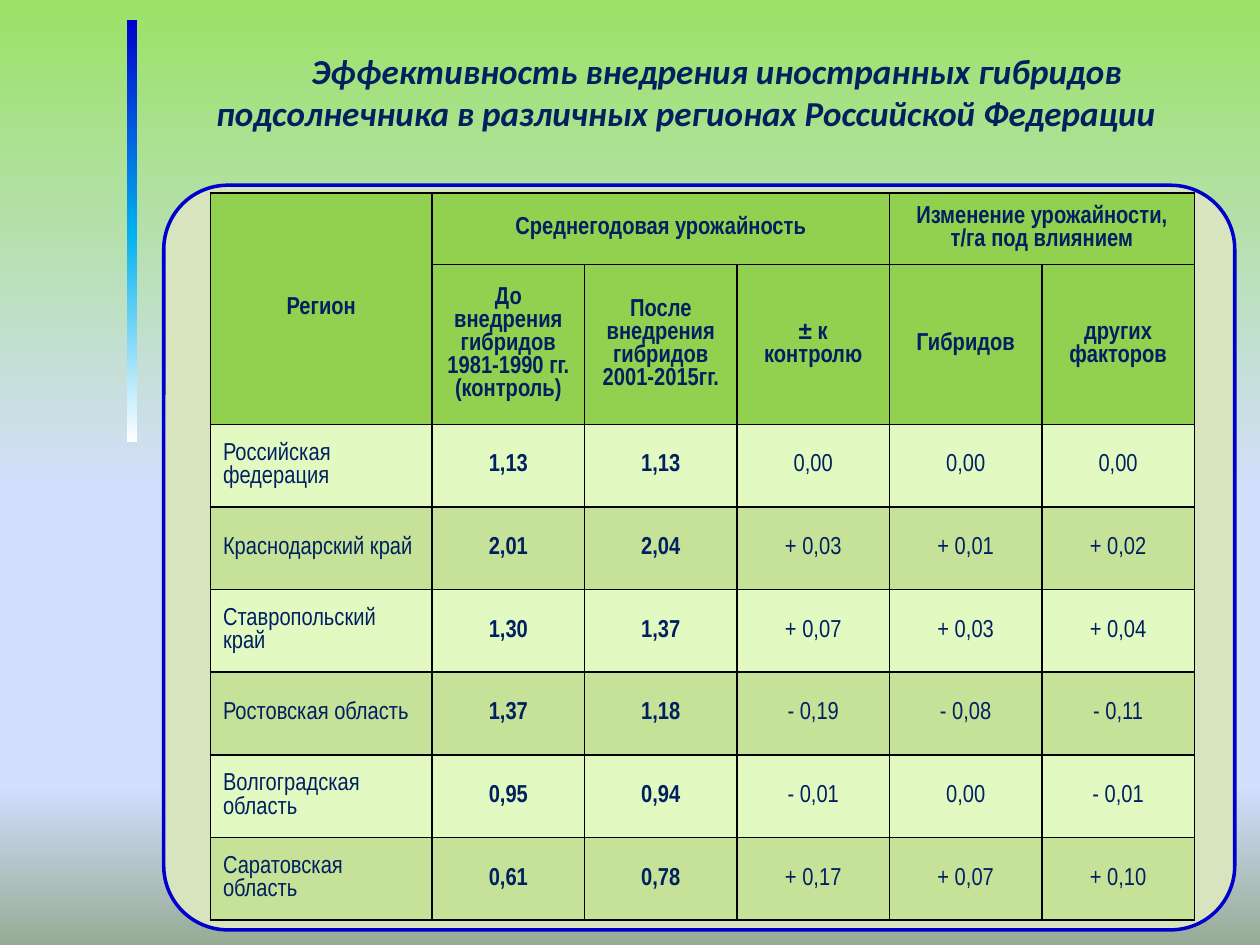
from dataclasses import dataclass

from lxml import etree
from pptx import Presentation
from pptx import util as u
from pptx.dml.color import RGBColor
from pptx.enum import shapes, text
from pptx.oxml.ns import qn

COLORS = {
    "text": "002060", "line": "0000CC", "panel": "D7E4BD", "border": "000000",
    "header": "92D050", "light": "E2FAC2", "dark": "C6E198",
}
BACKGROUND = [(0, "9BE266"), (53, "D4DEFF"), (83, "D4DEFF"), (100, "96AB94")]
BAR = [(0, "0000CC"), (50, "00B0F0"), (100, "FFFFFF")]
TITLE = ("Эффективность внедрения иностранных гибридов подсолнечника "
         "в различных регионах Российской Федерации")
COL_WIDTHS = [1.76] + [1.21] * 5
ROW_HEIGHTS = [0.57, 1.26] + [0.656] * 6


@dataclass
class Header:
    row: int
    col: int
    label: str
    rows: int = 1
    cols: int = 1


HEADERS = [
    Header(0, 0, "Регион", rows=2),
    Header(0, 1, "Среднегодовая урожайность", cols=3),
    Header(0, 4, "Изменение урожайности, т/га под влиянием", cols=2),
    Header(1, 1, "До внедрения гибридов 1981-1990 гг. (контроль)"),
    Header(1, 2, "После внедрения гибридов 2001-2015гг."),
    Header(1, 3, "± к контролю"),
    Header(1, 4, "Гибридов"),
    Header(1, 5, "других факторов"),
]
REGIONS = [
    ("Российская федерация", "1,13", "1,13", "0,00", "0,00", "0,00"),
    ("Краснодарский край", "2,01", "2,04", "+ 0,03", "+ 0,01", "+ 0,02"),
    ("Ставропольский край", "1,30", "1,37", "+ 0,07", "+ 0,03", "+ 0,04"),
    ("Ростовская область", "1,37", "1,18", "- 0,19", "- 0,08", "- 0,11"),
    ("Волгоградская область", "0,95", "0,94", "- 0,01", "0,00", "- 0,01"),
    ("Саратовская область", "0,61", "0,78", "+ 0,17", "+ 0,07", "+ 0,10"),
]


def rgb(name: str) -> RGBColor:
    return RGBColor.from_string(COLORS[name])


def set_gradient(fill, element, stops: list) -> None:
    """Fill from top to bottom with (percent, colour) stops."""
    fill.gradient()
    fill.gradient_angle = 270
    stop_list = element.find(".//" + qn("a:gsLst"))
    for old in list(stop_list):
        stop_list.remove(old)
    for percent, color in stops:
        gs = etree.SubElement(stop_list, qn("a:gs"), pos=str(percent * 1000))
        etree.SubElement(gs, qn("a:srgbClr"), val=color)


def write(p, label: str, align, **font) -> None:
    p.alignment = align
    r = p.add_run()
    r.text = label
    r.font.color.rgb = rgb("text")
    for name, value in font.items():
        setattr(r.font, name, value)


def add_shape(s, kind, left: float, top: float, width: float, height: float):
    sp = s.shapes.add_shape(kind, *map(u.Inches, (left, top, width, height)))
    sp.shadow.inherit = False
    return sp


def set_borders(cell) -> None:
    tc_pr = cell._tc.get_or_add_tcPr()
    for i, side in enumerate(("a:lnL", "a:lnR", "a:lnT", "a:lnB")):
        ln = etree.Element(qn(side), w=str(u.Pt(1)))
        solid = etree.SubElement(ln, qn("a:solidFill"))
        etree.SubElement(solid, qn("a:srgbClr"), val=COLORS["border"])
        tc_pr.insert(i, ln)


def write_cell(cell, label: str, align, bold: bool) -> None:
    cell.vertical_anchor = text.MSO_ANCHOR.MIDDLE
    write(cell.text_frame.paragraphs[0], label, align,
          size=u.Pt(14), name="Arial Narrow", bold=bold)


def add_yield_table(s) -> None:
    frame = s.shapes.add_table(
        len(ROW_HEIGHTS), len(COL_WIDTHS), u.Inches(1.67), u.Inches(1.53),
        u.Inches(sum(COL_WIDTHS)), u.Inches(sum(ROW_HEIGHTS)))
    table = frame.table
    table.first_row = table.horz_banding = False
    for column, width in zip(table.columns, COL_WIDTHS):
        column.width = u.Inches(width)
    for i, (row, height) in enumerate(zip(table.rows, ROW_HEIGHTS)):
        row.height = u.Inches(height)
        color = "header" if i < 2 else ("light", "dark")[i % 2]
        for cell in row.cells:
            cell.fill.solid()
            cell.fill.fore_color.rgb = rgb(color)
            set_borders(cell)

    center, left = text.PP_ALIGN.CENTER, text.PP_ALIGN.LEFT
    for h in HEADERS:
        cell = table.cell(h.row, h.col)
        if h.rows > 1 or h.cols > 1:
            cell.merge(table.cell(h.row + h.rows - 1, h.col + h.cols - 1))
        write_cell(cell, h.label, center, True)
    for i, region in enumerate(REGIONS, start=2):
        for j, value in enumerate(region):
            write_cell(table.cell(i, j), value, center if j else left, j in (1, 2))


def add_title(s) -> None:
    box = s.shapes.add_textbox(*map(u.Inches, (1.09, 0.34, 8.71, 0.77)))
    tf = box.text_frame
    tf.word_wrap = True
    tf.vertical_anchor = text.MSO_ANCHOR.MIDDLE
    p = tf.paragraphs[0]
    p._p.get_or_add_pPr().set("indent", str(u.Inches(0.49)))
    write(p, TITLE, text.PP_ALIGN.CENTER,
          size=u.Pt(20), name="Calibri", bold=True, italic=True)


def main() -> None:
    prs = Presentation()
    prs.slide_width, prs.slide_height = u.Inches(10), u.Inches(7.5)
    s = prs.slides.add_slide(prs.slide_layouts[6])
    set_gradient(s.background.fill, s.element, BACKGROUND)

    bar = add_shape(s, shapes.MSO_SHAPE.RECTANGLE, 1.01, 0.16, 0.08, 3.35)
    set_gradient(bar.fill, bar.element, BAR)
    bar.line.fill.background()

    panel = add_shape(s, shapes.MSO_SHAPE.ROUNDED_RECTANGLE, 1.3, 1.47, 8.5, 5.91)
    panel.adjustments[0] = 0.086
    panel.fill.solid()
    panel.fill.fore_color.rgb = rgb("panel")
    panel.line.color.rgb = rgb("line")
    panel.line.width = u.Pt(2)

    add_title(s)
    add_yield_table(s)
    prs.save("out.pptx")


if __name__ == "__main__":
    main()
